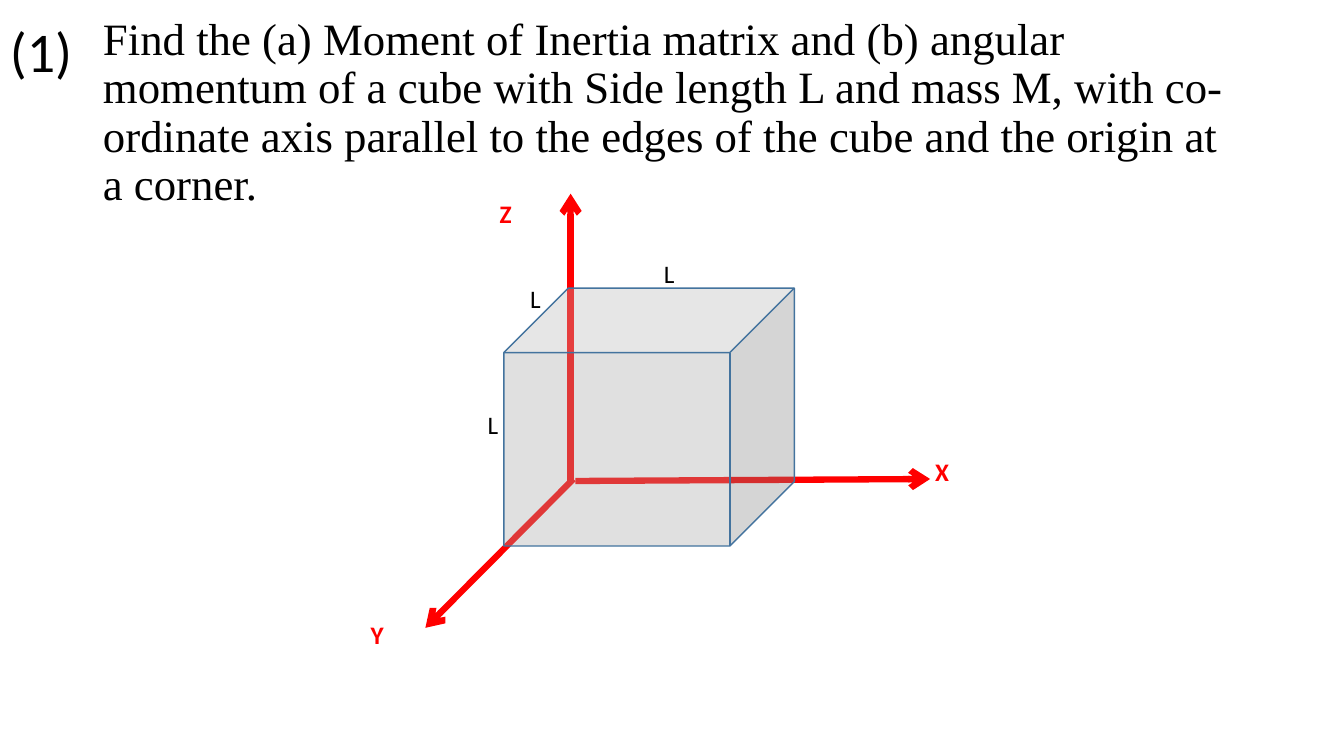
import pptx
import pptx.util
import pptx.dml.color
import pptx.enum.shapes
import pptx.enum.text
import pptx.oxml.ns
from dataclasses import dataclass

Cm = pptx.util.Cm
Pt = pptx.util.Pt
MSO = pptx.enum.text
RGB = pptx.dml.color.RGBColor.from_string
qn = pptx.oxml.ns.qn


@dataclass(frozen=True)
class Theme:
    ink: str = "000000"
    axis: str = "FF0000"
    cube: str = "A6A6A6"
    edge: str = "43739E"
    cube_opacity: int = 34
    serif: str = "Times New Roman"
    sans: str = "Calibri"
    title_size: int = 32
    number_size: int = 40
    label_size: int = 18
    axis_width: float = 4.5
    edge_width: float = 1


class Deck:
    def __init__(self, theme):
        self.theme = theme
        self.prs = pptx.Presentation()
        self.prs.slide_width, self.prs.slide_height = Cm(33.87), Cm(19.05)
        self.s = self.prs.slides.add_slide(self.prs.slide_layouts[5])

    def set_text(self, sp, text, font, size, color, bold=False, **frame):
        tf = sp.text_frame
        for name, value in frame.items():
            setattr(tf, name, value)
        p = tf.paragraphs[0]
        p.alignment = MSO.PP_ALIGN.LEFT
        r = p.add_run()
        r.text = text
        for name, value in {"name": font, "size": Pt(size), "bold": bold}.items():
            setattr(r.font, name, value)
        r.font.color.rgb = RGB(color)
        return p

    def title(self, text, left, top, width, height):
        t, sp = self.theme, self.s.shapes.title
        place = {"left": left, "top": top, "width": width, "height": height}
        for name, value in place.items():
            setattr(sp, name, Cm(value))
        p = self.set_text(sp, text, t.serif, t.title_size, t.ink, word_wrap=True,
                          auto_size=MSO.MSO_AUTO_SIZE.NONE,
                          vertical_anchor=MSO.MSO_ANCHOR.MIDDLE)
        p.line_spacing = 0.9

    def label(self, text, left, top, width, height, size, color, bold=False, wrap=False):
        sp = self.s.shapes.add_textbox(Cm(left), Cm(top), Cm(width), Cm(height))
        self.set_text(sp, text, self.theme.sans, size, color, bold, word_wrap=wrap,
                      auto_size=MSO.MSO_AUTO_SIZE.SHAPE_TO_FIT_TEXT)

    def arrow(self, start, end):
        c = self.s.shapes.add_connector(pptx.enum.shapes.MSO_CONNECTOR.STRAIGHT,
                                        *map(Cm, start + end))
        c.line.color.rgb = RGB(self.theme.axis)
        c.line.width = Pt(self.theme.axis_width)
        sp_pr = c._element.spPr
        ln = sp_pr.find(qn("a:ln"))
        ln.append(ln.makeelement(qn("a:tailEnd"), {"type": "arrow"}))
        sp_pr.append(sp_pr.makeelement(qn("a:effectLst"), {}))

    def cube(self, left, top, width, height):
        t = self.theme
        sp = self.s.shapes.add_shape(pptx.enum.shapes.MSO_SHAPE.CUBE,
                                     Cm(left), Cm(top), Cm(width), Cm(height))
        sp.shadow.inherit = False
        sp.fill.solid()
        sp.fill.fore_color.rgb = RGB(t.cube)
        clr = sp._element.spPr.find(qn("a:solidFill")).find(qn("a:srgbClr"))
        clr.append(clr.makeelement(qn("a:alpha"), {"val": str(t.cube_opacity * 1000)}))
        sp.line.color.rgb = RGB(t.edge)
        sp.line.width = Pt(t.edge_width)


def main():
    theme = Theme()
    deck = Deck(theme)
    deck.title("Find the (a) Moment of Inertia matrix and (b) angular momentum of a cube "
               "with Side length L and mass M, with co-ordinate axis parallel to the edges "
               "of the cube and the origin at a corner.", 2.34, 1.02, 29.21, 3.68)

    axes = [("X", (23.32, 11.38), (14.5, 12.12), (23.44, 12.07)),
            ("Y", (9.09, 15.49), (14.45, 12.07), (10.72, 15.82)),
            ("Z", (12.34, 4.88), (14.38, 12.12), (14.38, 4.88))]
    for name, place, start, end in axes:
        deck.arrow(start, end)
        deck.label(name, *place, 1.65, 1.02, theme.label_size, theme.axis,
                   bold=True, wrap=True)

    deck.cube(12.7, 7.26, 7.32, 6.5)
    for place in [(16.48, 6.38), (12.04, 10.19), (13.11, 7.01)]:
        deck.label("L", *place, 0.79, 1.02, theme.label_size, theme.ink)

    deck.label("(1)", 0, 0.28, 2.11, 1.96, theme.number_size, theme.ink)
    deck.prs.save("out.pptx")


if __name__ == "__main__":
    main()
